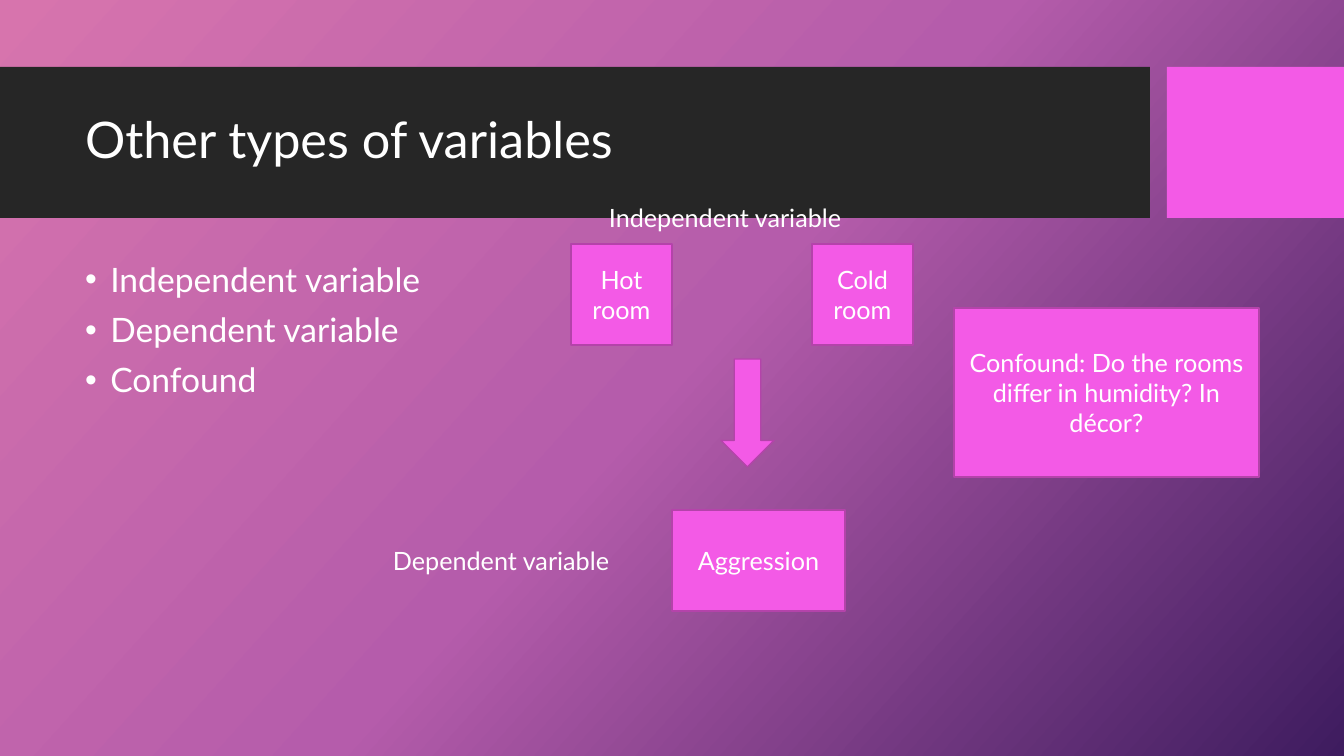
from copy import deepcopy

from lxml.etree import SubElement
from pptx import Presentation
from pptx.dml.color import RGBColor
from pptx.enum.shapes import MSO_SHAPE
from pptx.enum.text import MSO_ANCHOR, MSO_AUTO_SIZE, PP_ALIGN
from pptx.oxml.ns import qn
from pptx.util import Emu, Pt

COLORS = {
    "band": "262626",
    "pink": "F35AE6",
    "edge": "B443AA",
    "text": "FFFFFF",
}
BACKGROUND = [(0, "D774AD"), (0.5, "B55CAB"), (1, "3E1C5F")]
PX = 914400 / 100.8


def px(n):
    return Emu(round(n * PX))


def rgb(name):
    return RGBColor.from_string(COLORS[name])


class Deck:
    font = "Lato"

    def __init__(self, width, height):
        self.prs = Presentation()
        self.prs.slide_width, self.prs.slide_height = px(width), px(height)
        self.s = self.prs.slides.add_slide(self.prs.slide_layouts[1])

    def background(self, stops, angle):
        fill = self.s.background.fill
        fill.gradient()
        fill.gradient_angle = 360 - angle
        gs_list = next(self.s.element.iter(qn("a:gsLst")))
        while len(gs_list) < len(stops):
            gs_list.append(deepcopy(gs_list[0]))
        for stop, (position, color) in zip(fill.gradient_stops, stops):
            stop.position = position
            stop.color.rgb = RGBColor.from_string(color)

    def add_text(self, p, text, size, **formats):
        for name, value in formats.items():
            setattr(p, name, value)
        r = p.add_run()
        r.text = text
        r.font.color.rgb = rgb("text")
        for name, value in {"name": self.font, "size": Pt(size)}.items():
            setattr(r.font, name, value)

    def place(self, index, box):
        """Move a placeholder to the box and to the front."""
        ph = self.s.placeholders[index]
        for name, value in zip(("left", "top", "width", "height"), box):
            setattr(ph, name, px(value))
        self.s.shapes.element.append(ph.element)
        return ph.text_frame

    def title(self, text, *box):
        tf = self.place(0, box)
        tf.vertical_anchor = MSO_ANCHOR.MIDDLE
        self.add_text(tf.paragraphs[0], text, 36, alignment=PP_ALIGN.LEFT, line_spacing=0.9)

    def bullets(self, items, *box):
        tf = self.place(1, box)
        for i, item in enumerate(items):
            p = tf.add_paragraph() if i else tf.paragraphs[0]
            pPr = p._p.get_or_add_pPr()
            pPr.set("marL", "228600")
            pPr.set("indent", "-228600")
            SubElement(pPr, qn("a:buChar"), char="•")
            self.add_text(p, item, 24, line_spacing=0.9, space_before=Pt(10 if i else 0))

    def shape(self, kind, *box, text="", fill="pink", edge="edge"):
        sp = self.s.shapes.add_shape(kind, *map(px, box))
        sp.shadow.inherit = False
        sp.fill.solid()
        sp.fill.fore_color.rgb = rgb(fill)
        if edge:
            sp.line.color.rgb = rgb(edge)
            sp.line.width = Pt(1)
        else:
            sp.line.fill.background()
        if text:
            tf = sp.text_frame
            tf.word_wrap = True
            tf.vertical_anchor = MSO_ANCHOR.MIDDLE
            self.add_text(tf.paragraphs[0], text, 18, alignment=PP_ALIGN.CENTER)

    def label(self, text, *box):
        tf = self.s.shapes.add_textbox(*map(px, box)).text_frame
        tf.word_wrap = False
        tf.auto_size = MSO_AUTO_SIZE.SHAPE_TO_FIT_TEXT
        self.add_text(tf.paragraphs[0], text, 18)


def main():
    deck = Deck(1344, 756)
    rect = MSO_SHAPE.RECTANGLE
    deck.background(BACKGROUND, 42)
    deck.shape(rect, 0, 67, 1150, 151, fill="band", edge=None)
    deck.shape(rect, 1167, 67, 177, 151, edge=None)
    deck.title("Other types of variables", 75, 83, 1059, 119)
    deck.bullets(["Independent variable", "Dependent variable", "Confound"],
                 75, 258, 1059, 397)

    for text, *box in [
        ("Hot room", 571, 244, 101, 101),
        ("Confound: Do the rooms differ in humidity? In décor?", 954, 308, 305, 169),
        ("Aggression", 672, 510, 173, 101),
        ("Cold room", 812, 244, 101, 101),
    ]:
        deck.shape(rect, *box, text=text)

    deck.label("Independent variable", 599, 197, 263, 40)
    deck.label("Dependent variable", 383, 540, 244, 40)
    deck.shape(MSO_SHAPE.DOWN_ARROW, 721, 359, 53, 108)
    deck.prs.save("out.pptx")


if __name__ == "__main__":
    main()
